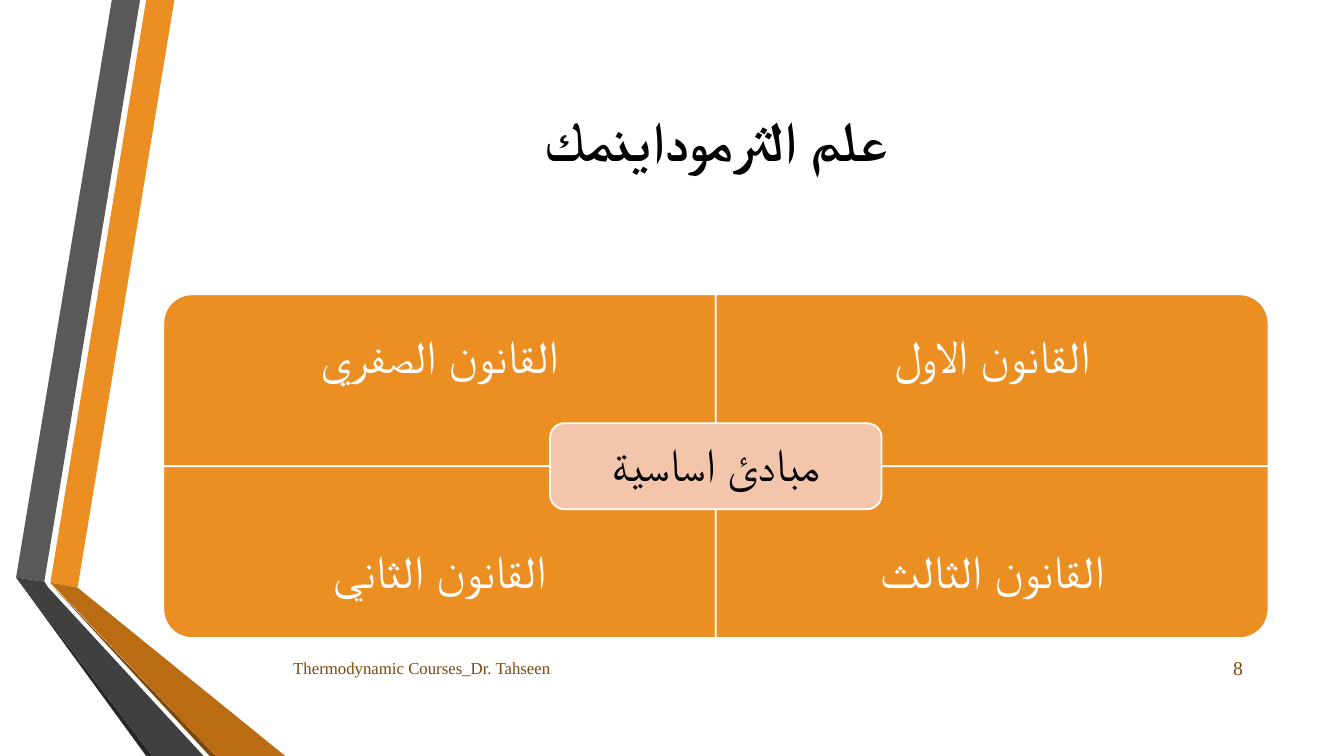
from dataclasses import dataclass

from lxml.etree import SubElement
from pptx import Presentation
from pptx.dml.color import RGBColor
from pptx.enum.shapes import MSO_SHAPE
from pptx.enum.text import MSO_ANCHOR, PP_ALIGN
from pptx.oxml.ns import qn
from pptx.util import Inches, Pt


@dataclass(frozen=True)
class Theme:
    """Colours, fonts and type sizes of the slide."""
    orange: str = "EB8F22"
    amber: str = "B96C11"
    brown: str = "7B480B"
    gray: str = "595959"
    charcoal: str = "404040"
    coal: str = "262626"
    peach: str = "F3C6AC"
    white: str = "FFFFFF"
    black: str = "000000"
    serif: str = "Times New Roman"
    sans: str = "Arial"
    title_size: float = 40
    law_size: float = 33
    number_size: float = 14
    footer_size: float = 12
    line_width: float = 1.25


THEME = Theme()


def paint(shape, fill, line=None):
    """Give a shape its fill and outline, without shadow."""
    shape.shadow.inherit = False
    shape.fill.solid()
    shape.fill.fore_color.rgb = RGBColor.from_string(fill)
    if line:
        shape.line.color.rgb = RGBColor.from_string(line)
        shape.line.width = Pt(THEME.line_width)
    else:
        shape.line.fill.background()


def add_text(page, box, text, size, color, font, align=PP_ALIGN.CENTER,
             arabic=True, bold=False, inset=None, spacing=None):
    """Place a middle-anchored one-line text and return its paragraph."""
    frame = page.shapes.add_textbox(*map(Inches, box)).text_frame
    frame.word_wrap = True
    frame.vertical_anchor = MSO_ANCHOR.MIDDLE
    if inset is not None:
        frame.margin_left = frame.margin_right = Inches(inset)
        frame.margin_top = frame.margin_bottom = Inches(inset)
    para = frame.paragraphs[0]
    para.alignment = align
    if spacing:
        para.line_spacing = spacing
    span = para.add_run()
    span.text = text
    span.font.size = Pt(size)
    span.font.bold = bold
    span.font.name = font
    span.font.color.rgb = RGBColor.from_string(color)
    if arabic:
        para._p.get_or_add_pPr().set("rtl", "1")
        SubElement(span._r.get_or_add_rPr(), qn("a:cs")).set("typeface", font)
    return para


def draw_ribbons(page, box):
    """Draw the folded ribbons down the left edge of the box."""
    left, top, width, height = box
    bottom = top + height
    ribbons = [
        (THEME.orange, [(0.5, 5.78), (0.77, 5.83), (1.73, top), (1.45, top)]),
        (THEME.gray, [(1.39, top), (1.11, top), (0.16, 5.73), (0.44, 5.77)]),
        (THEME.coal, [(0.16, 5.73), (1.45, bottom), (1.51, bottom)]),
        (THEME.brown, [(0.5, 5.79), (2.08, bottom), (2.14, bottom)]),
        (THEME.amber, [(0.5, 5.78), (2.14, bottom), (2.83, bottom), (0.77, 5.83)]),
        (THEME.charcoal, [(2.02, bottom), (0.48, 5.83), (0.44, 5.77),
                          (0.16, 5.73), (1.51, bottom)]),
    ]
    for color, points in ribbons:
        corners = [(Inches(left + x), Inches(y)) for x, y in points]
        builder = page.shapes.build_freeform(*corners[0])
        builder.add_line_segments(corners[1:], close=True)
        paint(builder.convert_to_shape(), color)


def draw_title(page, box):
    """Write the slide title, followed by an empty line."""
    para = add_text(page, box, "علم الثرموداينمك", THEME.title_size,
                    THEME.black, THEME.serif, bold=True)
    para.add_line_break()
    para.font.size = Pt(THEME.title_size)
    line_break = para._p.find(qn("a:br"))
    SubElement(line_break, qn("a:rPr")).set("sz", str(THEME.title_size * 100))


def draw_quadrant(page, box, law, rotation, text_top):
    """Draw one quadrant with its rounded corner turned outwards."""
    left, top, width, height = box
    wide, tall = (height, width) if rotation % 180 else (width, height)
    quadrant = page.shapes.add_shape(
        MSO_SHAPE.ROUND_1_RECTANGLE,
        Inches(left + (width - wide) / 2), Inches(top + (height - tall) / 2),
        Inches(wide), Inches(tall))
    quadrant.rotation = rotation
    paint(quadrant, THEME.orange, THEME.white)
    add_text(page, (left, text_top, width, height * 0.75), law, THEME.law_size,
             THEME.white, THEME.sans, inset=0.26, spacing=0.9)


def draw_matrix(page, box):
    """Draw the four laws around the central label."""
    left, top, width, height = box
    half_width, half_height = width / 2, height / 2
    laws = [("القانون الصفري", 270), ("القانون الاول", 0),
            ("القانون الثاني", 180), ("القانون الثالث", 90)]
    for index, (law, rotation) in enumerate(laws):
        row, column = divmod(index, 2)
        quadrant_top = top + row * half_height
        draw_quadrant(page, (left + column * half_width, quadrant_top,
                             half_width, half_height),
                      law, rotation, quadrant_top + row * half_height / 4)
    label_width, label_height = width * 0.3, height / 4
    label_box = (left + (width - label_width) / 2,
                 top + (height - label_height) / 2, label_width, label_height)
    label = page.shapes.add_shape(MSO_SHAPE.ROUNDED_RECTANGLE,
                                  *map(Inches, label_box))
    paint(label, THEME.peach, THEME.white)
    add_text(page, label_box, "مبادئ اساسية", THEME.law_size, THEME.black,
             THEME.sans, inset=0.18, spacing=0.9)


def draw_footer(page, box):
    """Write the course name and the slide number."""
    left, top, width, height = box
    number_width = 0.6
    add_text(page, (left + width - number_width, top, number_width, height), "8",
             THEME.number_size, THEME.brown, THEME.serif, arabic=False)
    add_text(page, (left, top + 0.01, 7.75, height),
             "Thermodynamic Courses_Dr. Tahseen", THEME.footer_size,
             THEME.brown, THEME.serif, PP_ALIGN.LEFT, arabic=False)


def main():
    """Build the slide and save the deck."""
    deck = Presentation()
    deck.slide_width, deck.slide_height = Inches(13.33), Inches(7.5)
    page = deck.slides.add_slide(deck.slide_layouts[6])
    draw_ribbons(page, (0, 0, 2.83, 7.5))
    draw_title(page, (1.62, 0.75, 10.96, 1.92))
    draw_matrix(page, (1.62, 2.92, 10.96, 3.41))
    draw_footer(page, (2.81, 6.42, 9.77, 0.4))
    deck.save("out.pptx")


if __name__ == "__main__":
    main()
